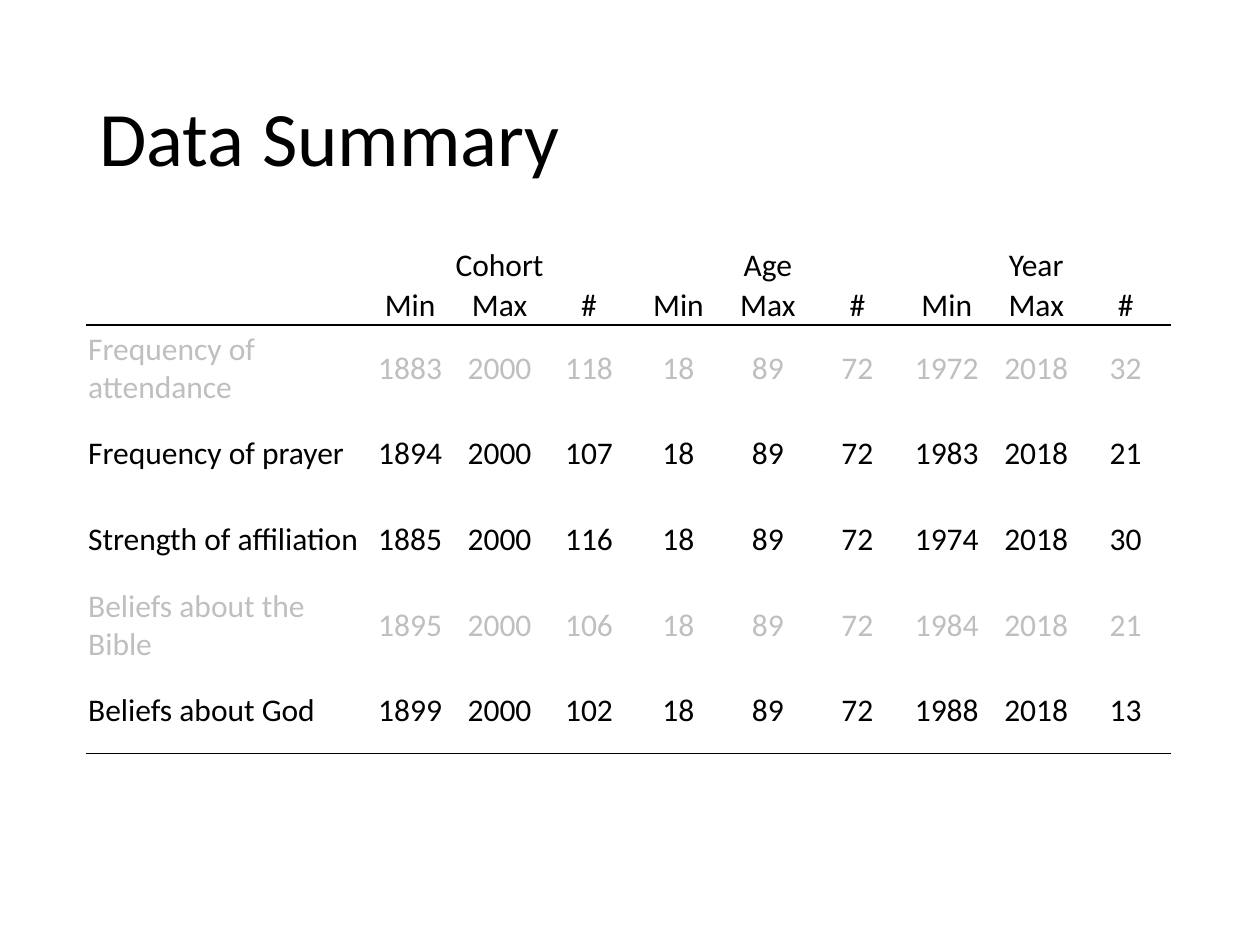
from dataclasses import dataclass

from lxml import etree
from pptx import Presentation
from pptx.dml.color import RGBColor
from pptx.enum.text import MSO_ANCHOR, PP_ALIGN
from pptx.oxml.ns import qn
from pptx.slide import Slide
from pptx.table import Table, _Cell
from pptx.text.text import TextFrame
from pptx.util import Inches, Pt

LEFT, CENTER = PP_ALIGN.LEFT, PP_ALIGN.CENTER
MIDDLE, BOTTOM = MSO_ANCHOR.MIDDLE, MSO_ANCHOR.BOTTOM


@dataclass(frozen=True)
class Theme:
    font: str = "Calibri"
    ink: str = "000000"
    muted: str = "BFBFBF"
    paper: str = "FFFFFF"
    title_size: int = 44
    table_size: int = 18
    border_width: int = 1


@dataclass(frozen=True)
class Measure:
    label: str
    values: tuple[int, ...]
    muted: bool = False


THEME = Theme()
GROUPS = ("Cohort", "Age", "Year")
STATISTICS = ("Min", "Max", "#")
MEASURES = (
    Measure("Frequency of attendance", (1883, 2000, 118, 18, 89, 72, 1972, 2018, 32), True),
    Measure("Frequency of prayer", (1894, 2000, 107, 18, 89, 72, 1983, 2018, 21)),
    Measure("Strength of affiliation", (1885, 2000, 116, 18, 89, 72, 1974, 2018, 30)),
    Measure("Beliefs about the Bible", (1895, 2000, 106, 18, 89, 72, 1984, 2018, 21), True),
    Measure("Beliefs about God", (1899, 2000, 102, 18, 89, 72, 1988, 2018, 13)),
)
COLUMN_WIDTHS = [2.21] + [0.71] * len(GROUPS) * len(STATISTICS)
ROW_HEIGHTS = [0.41, 0.32] + [0.68] * len(MEASURES)
HEADER_ROWS = 2
RULED_ROWS = (HEADER_ROWS - 1, len(ROW_HEIGHTS) - 1)


def write_text(frame: TextFrame, text: str, *, size: int = THEME.table_size,
               color: str = THEME.ink, align: PP_ALIGN = CENTER,
               line_spacing: float = 1.0) -> None:
    para = frame.paragraphs[0]
    para.alignment = align
    para.line_spacing = line_spacing
    span = para.add_run()
    span.text = text
    span.font.name = THEME.font
    span.font.size = Pt(size)
    span.font.color.rgb = RGBColor.from_string(color)


def add_border(cell: _Cell, side: str, color: str) -> None:
    properties = cell._tc.get_or_add_tcPr()
    line = etree.SubElement(properties, qn(f"a:ln{side}"), w=str(Pt(THEME.border_width)))
    fill = etree.SubElement(line, qn("a:solidFill"))
    etree.SubElement(fill, qn("a:srgbClr"), val=color)


def format_cell(cell: _Cell, row: int) -> None:
    cell.margin_left = cell.margin_right = cell.margin_top = Inches(0.01)
    cell.margin_bottom = 0
    cell.vertical_anchor = BOTTOM if row < HEADER_ROWS else MIDDLE
    top = THEME.ink if row - 1 in RULED_ROWS else THEME.paper
    bottom = THEME.ink if row in RULED_ROWS else THEME.paper
    for side, color in (("L", THEME.paper), ("R", THEME.paper), ("T", top), ("B", bottom)):
        add_border(cell, side, color)
    cell.fill.background()


def add_title(page: Slide, text: str) -> None:
    box = page.shapes.add_textbox(Inches(0.69), Inches(0.4), Inches(8.62), Inches(1.45))
    box.text_frame.word_wrap = True
    box.text_frame.vertical_anchor = MIDDLE
    write_text(box.text_frame, text, size=THEME.title_size, align=LEFT, line_spacing=0.9)


def add_grid(page: Slide) -> Table:
    frame = page.shapes.add_table(
        len(ROW_HEIGHTS), len(COLUMN_WIDTHS), Inches(0.69), Inches(1.85),
        Inches(sum(COLUMN_WIDTHS)), Inches(sum(ROW_HEIGHTS)))
    table = frame.table
    table.first_row = table.horz_banding = False
    for column, width in zip(table.columns, COLUMN_WIDTHS):
        column.width = Inches(width)
    for index, (row, height) in enumerate(zip(table.rows, ROW_HEIGHTS)):
        row.height = Inches(height)
        for cell in row.cells:
            format_cell(cell, index)
    return table


def fill_headers(table: Table) -> None:
    for group_index, group in enumerate(GROUPS):
        first = 1 + group_index * len(STATISTICS)
        group_cell = table.cell(0, first)
        group_cell.merge(table.cell(0, first + len(STATISTICS) - 1))
        write_text(group_cell.text_frame, group)
        for column, statistic in enumerate(STATISTICS, first):
            write_text(table.cell(1, column).text_frame, statistic)


def fill_measure(table: Table, row: int, measure: Measure) -> None:
    color = THEME.muted if measure.muted else THEME.ink
    write_text(table.cell(row, 0).text_frame, measure.label, color=color, align=LEFT)
    for column, value in enumerate(measure.values, 1):
        write_text(table.cell(row, column).text_frame, str(value), color=color)


def main() -> None:
    deck = Presentation()
    deck.slide_width, deck.slide_height = Inches(10), Inches(7.5)
    page = deck.slides.add_slide(deck.slide_layouts[6])
    add_title(page, "Data Summary")
    table = add_grid(page)
    fill_headers(table)
    for row, measure in enumerate(MEASURES, HEADER_ROWS):
        fill_measure(table, row, measure)
    deck.save("out.pptx")


if __name__ == "__main__":
    main()
